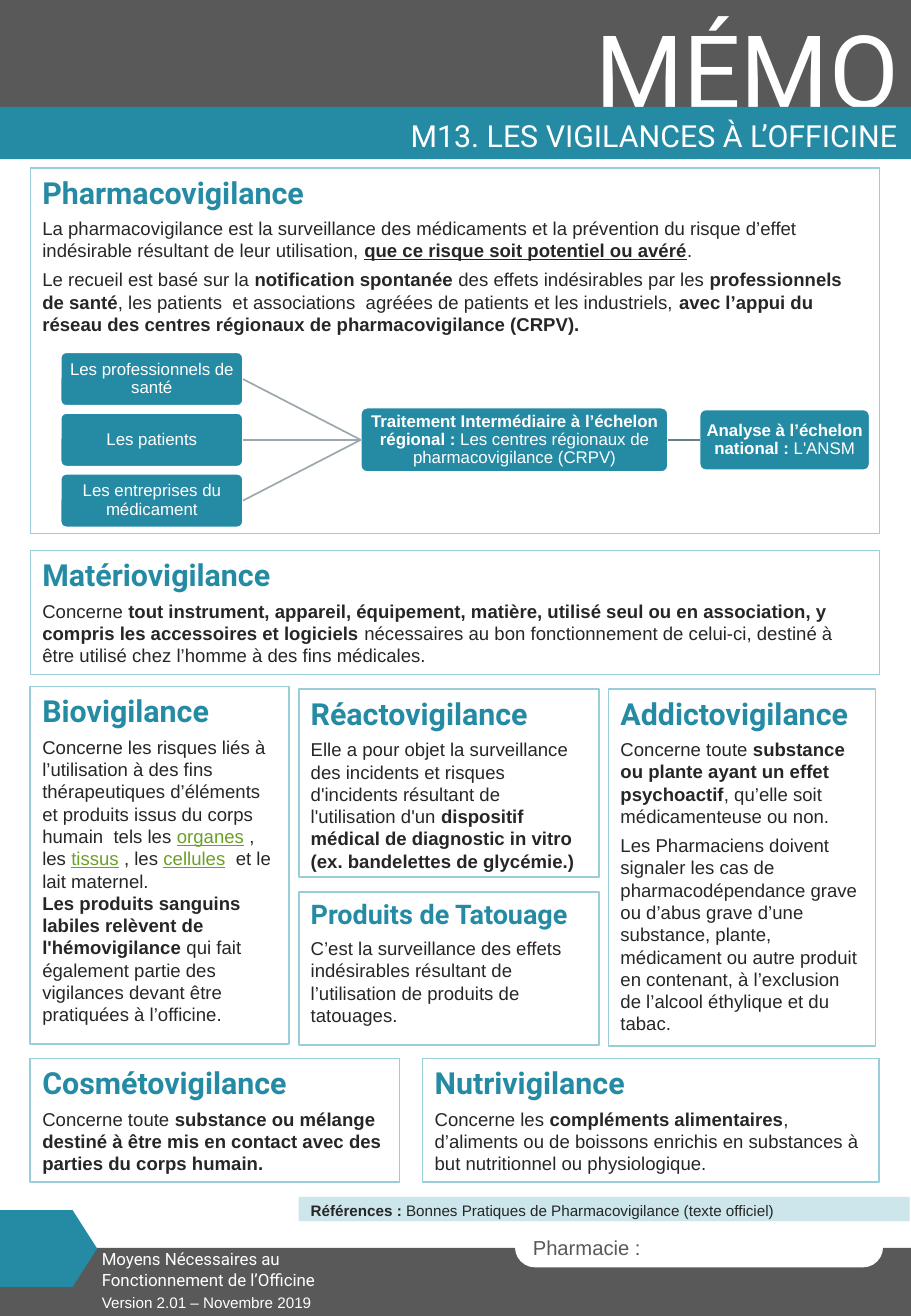
from pptx import Presentation
from pptx.dml.color import RGBColor
from pptx.enum.shapes import MSO_CONNECTOR, MSO_SHAPE
from pptx.enum.text import MSO_ANCHOR, MSO_AUTO_SIZE, PP_ALIGN
from pptx.oxml.ns import qn
from pptx.util import Inches, Pt
from lxml.etree import SubElement

TEAL = "258BA4"
GRAY = "595959"
WHITE = "FFFFFF"
INK = "262626"
GREEN = "6B9F25"
BORDER = "99CDD8"
PALE = "CCE6EB"
LINK = "9AA8AD"
DARK_LINK = "648189"


def rgb(value):
    return RGBColor.from_string(value)


def run(text, **style):
    return text, style


def bold(text, **style):
    return run(text, bold=True, **style)


def green(text):
    return run(text, color=GREEN, underline=True)


class Memo:
    def __init__(self, slide):
        self.slide = slide
        self.font = "Arial"
        self.heading_font = "Roboto"

    def add_text(self, paragraph, runs, size=11, color=INK, font=None, align=PP_ALIGN.LEFT,
                 spacing=None, after=0):
        paragraph.alignment = align
        paragraph.space_after = Pt(after)
        if spacing:
            paragraph.line_spacing = spacing
        for text, style in runs:
            piece = paragraph.add_run()
            piece.text = text
            piece.font.name = font or self.font
            piece.font.size = Pt(size)
            piece.font.bold = style.get("bold", False)
            piece.font.underline = style.get("underline", False)
            piece.font.color.rgb = rgb(style.get("color", color))

    def frame(self, shape, anchor=MSO_ANCHOR.TOP, inset=None):
        frame = shape.text_frame
        frame.word_wrap = True
        frame.auto_size = MSO_AUTO_SIZE.NONE
        frame.vertical_anchor = anchor
        if inset is not None:
            frame.margin_left = frame.margin_right = Inches(inset)
            frame.margin_top = frame.margin_bottom = Inches(inset)
        return frame

    def shape(self, left, top, width, height, fill=None, line=None,
              kind=MSO_SHAPE.RECTANGLE, adjustment=None):
        shape = self.slide.shapes.add_shape(
            kind, Inches(left), Inches(top), Inches(width), Inches(height))
        shape.shadow.inherit = False
        if adjustment is not None:
            shape.adjustments[0] = adjustment
        if fill:
            shape.fill.solid()
            shape.fill.fore_color.rgb = rgb(fill)
        else:
            shape.fill.background()
        if line:
            shape.line.color.rgb = rgb(line)
            shape.line.width = Pt(1)
        else:
            shape.line.fill.background()
        return shape

    def label(self, text, left, top, width, height, **style):
        box = self.slide.shapes.add_textbox(
            Inches(left), Inches(top), Inches(width), Inches(height))
        self.add_text(self.frame(box).paragraphs[0], [run(text)], color=WHITE, **style)

    def title(self, text, left, top, width, height):
        title = self.slide.shapes.title
        title.left, title.top = Inches(left), Inches(top)
        title.width, title.height = Inches(width), Inches(height)
        self.slide.shapes.element.append(title.element)
        frame = self.frame(title, MSO_ANCHOR.MIDDLE)
        self.add_text(frame.paragraphs[0], [run(text)], size=18, color=WHITE,
                      font=self.heading_font, align=PP_ALIGN.RIGHT, spacing=0.9)

    def panel(self, heading, left, top, width, height, *paragraphs, heading_size=18, after=4):
        frame = self.frame(self.shape(left, top, width, height, line=BORDER))
        self.add_text(frame.paragraphs[0], [bold(heading)], size=heading_size, color=TEAL,
                      font=self.heading_font, after=4)
        for runs in paragraphs:
            self.add_text(frame.add_paragraph(), runs, after=after)

    def node(self, left, middle, width, height, *runs):
        shape = self.shape(left, middle - height / 2, width, height, TEAL, WHITE,
                           MSO_SHAPE.ROUNDED_RECTANGLE, 0.1)
        frame = self.frame(shape, MSO_ANCHOR.MIDDLE, 0.03)
        self.add_text(frame.paragraphs[0], runs, size=10, color=WHITE,
                      align=PP_ALIGN.CENTER, spacing=0.9)
        return shape

    def link(self, start, end, color):
        connector = self.slide.shapes.add_connector(MSO_CONNECTOR.STRAIGHT, 0, 0, 0, 0)
        connector.begin_connect(start, 3)
        connector.end_connect(end, 1)
        connector.line.color.rgb = rgb(color)
        connector.line.width = Pt(1)
        SubElement(connector.element.spPr, qn("a:effectLst"))


def draw_banner(memo):
    memo.shape(0, 0, 7.5, 0.88, GRAY)
    memo.label("MÉMO", 4.63, 0.01, 2.87, 1.11, size=60, font=memo.heading_font,
               align=PP_ALIGN.RIGHT)
    memo.shape(0, 0.88, 7.5, 0.43, TEAL)
    memo.title("M13. LES VIGILANCES À L’OFFICINE", 0.23, 0.95, 7.26, 0.37)


def draw_footer(memo):
    memo.shape(0, 10.27, 7.5, 0.56, GRAY)
    pharmacy = memo.shape(4.24, 10.1, 3.03, 0.33, WHITE,
                          kind=MSO_SHAPE.ROUNDED_RECTANGLE, adjustment=0.5)
    memo.add_text(memo.frame(pharmacy, MSO_ANCHOR.MIDDLE).paragraphs[0],
                  [run("Pharmacie :")], size=12, color=GRAY)
    memo.shape(0, 9.96, 0.8, 0.63, TEAL, kind=MSO_SHAPE.PENTAGON, adjustment=0.32)
    memo.label("Moyens Nécessaires au Fonctionnement de l’Officine",
               0.74, 10.23, 2.53, 0.44, size=10, font=memo.heading_font)
    memo.label("Version 2.01 – Novembre 2019", 0.74, 10.59, 5.88, 0.25, size=9)
    references = memo.shape(2.46, 9.85, 5.03, 0.2, PALE)
    memo.add_text(memo.frame(references).paragraphs[0],
                  [bold("Références : "),
                   run("Bonnes Pratiques de Pharmacovigilance (texte officiel)")],
                  size=9, spacing=0.9)


def draw_panels(memo):
    memo.panel(
        "Pharmacovigilance", 0.25, 1.38, 6.99, 3.01,
        [run("La pharmacovigilance est la surveillance des médicaments et la prévention du "
             "risque d’effet indésirable résultant de leur utilisation, "),
         bold("que ce risque soit potentiel ou avéré", underline=True), run(".")],
        [run("Le recueil est basé sur la "), bold("notification spontanée "),
         run("des effets indésirables par les "), bold("professionnels de santé"),
         run(", les patients  et associations  agréées de patients et les industriels, "),
         bold("avec l’appui du réseau des centres régionaux de pharmacovigilance (CRPV).")])
    memo.panel(
        "Matériovigilance", 0.25, 4.53, 6.99, 1.02,
        [run("Concerne "),
         bold("tout instrument, appareil, équipement, matière, utilisé seul ou en "
              "association, y compris les accessoires et logiciels "),
         run("nécessaires au bon fonctionnement de celui-ci, destiné à être utilisé chez "
             "l’homme à des fins médicales.")])
    memo.panel(
        "Biovigilance", 0.25, 5.65, 2.13, 2.94,
        [run("Concerne les risques liés à l’utilisation à des fins thérapeutiques "
             "d’éléments et produits issus du corps humain  tels les "),
         green("organes"), run(" , les "), green("tissus"), run(" , les "),
         green("cellules"), run("  et le lait maternel.")],
        [bold("Les produits sanguins labiles relèvent de l'hémovigilance "),
         run("qui fait également partie des vigilances devant être pratiquées à "
             "l’officine.")], after=0)
    memo.panel(
        "Réactovigilance", 2.46, 5.67, 2.47, 1.55,
        [run("Elle a pour objet la surveillance des incidents et risques d'incidents "
             "résultant de l'utilisation d'un "),
         bold("dispositif médical de diagnostic in vitro (ex. bandelettes de glycémie.)")])
    memo.panel(
        "Produits de Tatouage", 2.46, 7.34, 2.47, 1.26,
        [run("C’est la surveillance des effets indésirables résultant de l’utilisation de "
             "produits de tatouages.")], heading_size=16)
    memo.panel(
        "Addictovigilance", 5.01, 5.67, 2.2, 2.94,
        [run("Concerne toute "), bold("substance ou plante ayant un effet psychoactif"),
         run(", qu’elle soit médicamenteuse ou non.")],
        [run("Les Pharmaciens doivent signaler les cas de pharmacodépendance grave ou "
             "d’abus grave d’une substance, plante, médicament ou autre produit en "
             "contenant, à l’exclusion de l’alcool éthylique et du tabac.")])
    memo.panel(
        "Cosmétovigilance", 0.25, 8.71, 3.04, 1.02,
        [run("Concerne toute "),
         bold("substance ou mélange destiné à être mis en contact avec des parties du "
              "corps humain.")])
    memo.panel(
        "Nutrivigilance", 3.48, 8.71, 3.76, 1.02,
        [run("Concerne les "), bold("compléments alimentaires"),
         run(", d’aliments ou de boissons enrichis en substances à but nutritionnel ou "
             "physiologique.")])


def draw_reporting_flow(memo):
    middle = 3.62
    national = memo.node(5.76, middle, 1.4, 0.5,
                         bold("Analyse à l’échelon national : "), run("L'ANSM"))
    regional = memo.node(2.97, middle, 2.53, 0.53,
                         bold("Traitement Intermédiaire à l’échelon régional : "),
                         run("Les centres régionaux de pharmacovigilance (CRPV)"))
    memo.link(regional, national, DARK_LINK)
    sources = ["Les professionnels de santé", "Les patients", "Les entreprises du médicament"]
    for index, source in enumerate(sources):
        reporter = memo.node(0.5, middle + (index - 1) * 0.5, 1.5, 0.44, run(source))
        memo.link(reporter, regional, LINK)


def main():
    presentation = Presentation()
    presentation.slide_width = Inches(7.5)
    presentation.slide_height = Inches(10.83)
    memo = Memo(presentation.slides.add_slide(presentation.slide_layouts[5]))
    draw_banner(memo)
    draw_footer(memo)
    draw_panels(memo)
    draw_reporting_flow(memo)
    presentation.save("out.pptx")


if __name__ == "__main__":
    main()
